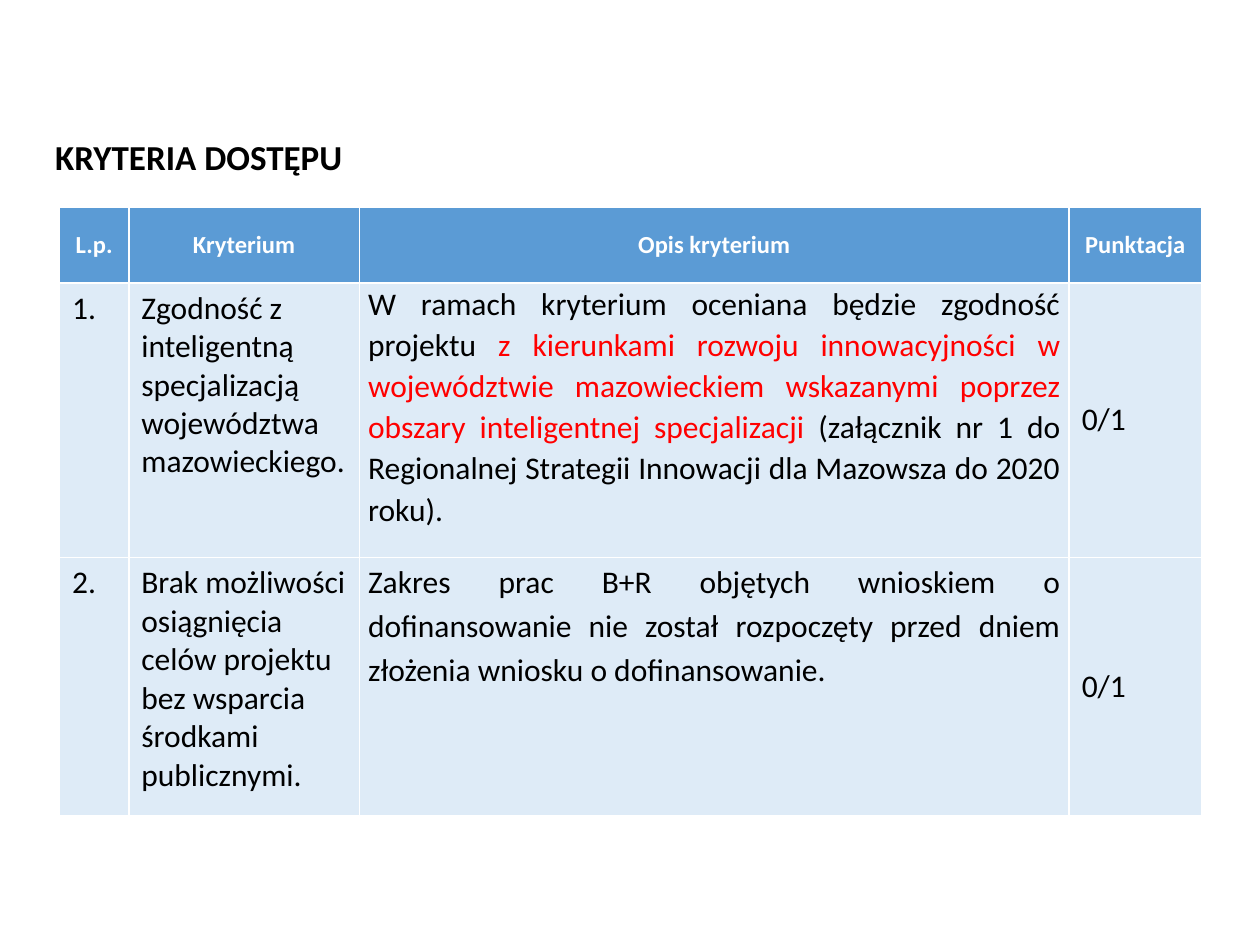
from pptx import Presentation
from pptx.dml.color import RGBColor
from pptx.enum.text import MSO_ANCHOR, PP_ALIGN
from pptx.util import Pt

WHITE = RGBColor(0xFF, 0xFF, 0xFF)
BLACK = RGBColor(0, 0, 0)
RED = RGBColor(0xFF, 0, 0)
HEADER_BLUE = RGBColor(0x5B, 0x9B, 0xD5)
PALE_BLUE = RGBColor(0xDE, 0xEB, 0xF7)
FONT = "Calibri"

COLUMN_WIDTHS = (39.6, 131.8, 405.6, 75.6)
ROW_HEIGHTS = (43.2, 157, 147.6)
HEADINGS = ("L.p.", "Kryterium", "Opis kryterium", "Punktacja")
# Number, criterion, description runs with colours, line spacing, score
CRITERIA = (
    ("1.", "Zgodność z inteligentną specjalizacją województwa mazowieckiego.",
     (("W ramach kryterium oceniana będzie zgodność projektu ", BLACK),
      ("z kierunkami rozwoju innowacyjności w województwie mazowieckiem "
       "wskazanymi poprzez obszary inteligentnej specjalizacji ", RED),
      ("(załącznik nr 1 do Regionalnej Strategii Innowacji dla Mazowsza "
       "do 2020 roku).", BLACK)),
     1.07, "0/1"),
    ("2.", "Brak możliwości osiągnięcia celów projektu bez wsparcia "
     "środkami publicznymi.",
     (("Zakres prac B+R objętych wnioskiem o dofinansowanie nie został "
       "rozpoczęty przed dniem złożenia wniosku o dofinansowanie.", BLACK),),
     1.15, "0/1"),
)


def style_paragraph(paragraph, size, color=None, bold=False):
    font = paragraph.font
    font.name, font.size, font.bold = FONT, Pt(size), bold
    if color is not None:
        font.color.rgb = color


def add_title(slide, left, top, width, height):
    frame = slide.shapes.add_textbox(
        Pt(left), Pt(top), Pt(width), Pt(height)).text_frame
    frame.word_wrap = True
    frame.vertical_anchor = MSO_ANCHOR.MIDDLE
    title = frame.paragraphs[0]
    title.text = "KRYTERIA DOSTĘPU"
    style_paragraph(title, 20, BLACK, bold=True)


def fill_cell(cell, fill, text_runs, size, bold=False,
              anchor=MSO_ANCHOR.TOP, align=PP_ALIGN.LEFT):
    """Fill a cell from (text, colour) pairs and return its paragraph."""
    cell.fill.solid()
    cell.fill.fore_color.rgb = fill
    cell.vertical_anchor = anchor
    paragraph = cell.text_frame.paragraphs[0]
    paragraph.alignment = align
    style_paragraph(paragraph, size, bold=bold)
    for text, color in text_runs:
        run = paragraph.add_run()
        run.text = text
        run.font.name, run.font.size, run.font.bold = FONT, Pt(size), bold
        run.font.color.rgb = color
    return paragraph


def fill_description(cell, text_runs, line_spacing):
    cell.margin_left = cell.margin_right = Pt(5)
    cell.margin_top = cell.margin_bottom = 0
    paragraph = fill_cell(cell, PALE_BLUE, text_runs, 18,
                          align=PP_ALIGN.JUSTIFY)
    paragraph.line_spacing = line_spacing
    paragraph.space_after = Pt(6)


def add_criteria_table(slide, left, top):
    table = slide.shapes.add_table(
        len(ROW_HEIGHTS), len(COLUMN_WIDTHS), Pt(left), Pt(top),
        Pt(sum(COLUMN_WIDTHS)), Pt(sum(ROW_HEIGHTS))).table
    table.horz_banding = False
    for column, width in zip(table.columns, COLUMN_WIDTHS):
        column.width = Pt(width)
    for row, height in zip(table.rows, ROW_HEIGHTS):
        row.height = Pt(height)

    for column, heading in enumerate(HEADINGS):
        fill_cell(table.cell(0, column), HEADER_BLUE, [(heading, WHITE)], 14,
                  True, MSO_ANCHOR.MIDDLE, PP_ALIGN.CENTER)
    for row, criterion in enumerate(CRITERIA, start=1):
        number, name, description, line_spacing, score = criterion
        fill_cell(table.cell(row, 0), PALE_BLUE, [(number, BLACK)], 18)
        fill_cell(table.cell(row, 1), PALE_BLUE, [(name, BLACK)], 18)
        fill_description(table.cell(row, 2), description, line_spacing)
        fill_cell(table.cell(row, 3), PALE_BLUE, [(score, BLACK)], 18,
                  anchor=MSO_ANCHOR.MIDDLE)


def main():
    prs = Presentation()
    prs.slide_width, prs.slide_height = Pt(720), Pt(540)
    slide = prs.slides.add_slide(prs.slide_layouts[6])
    add_criteria_table(slide, 34, 118.4)
    add_title(slide, 24.5, 73.4, 266.4, 31.5)
    prs.save("out.pptx")


if __name__ == "__main__":
    main()
